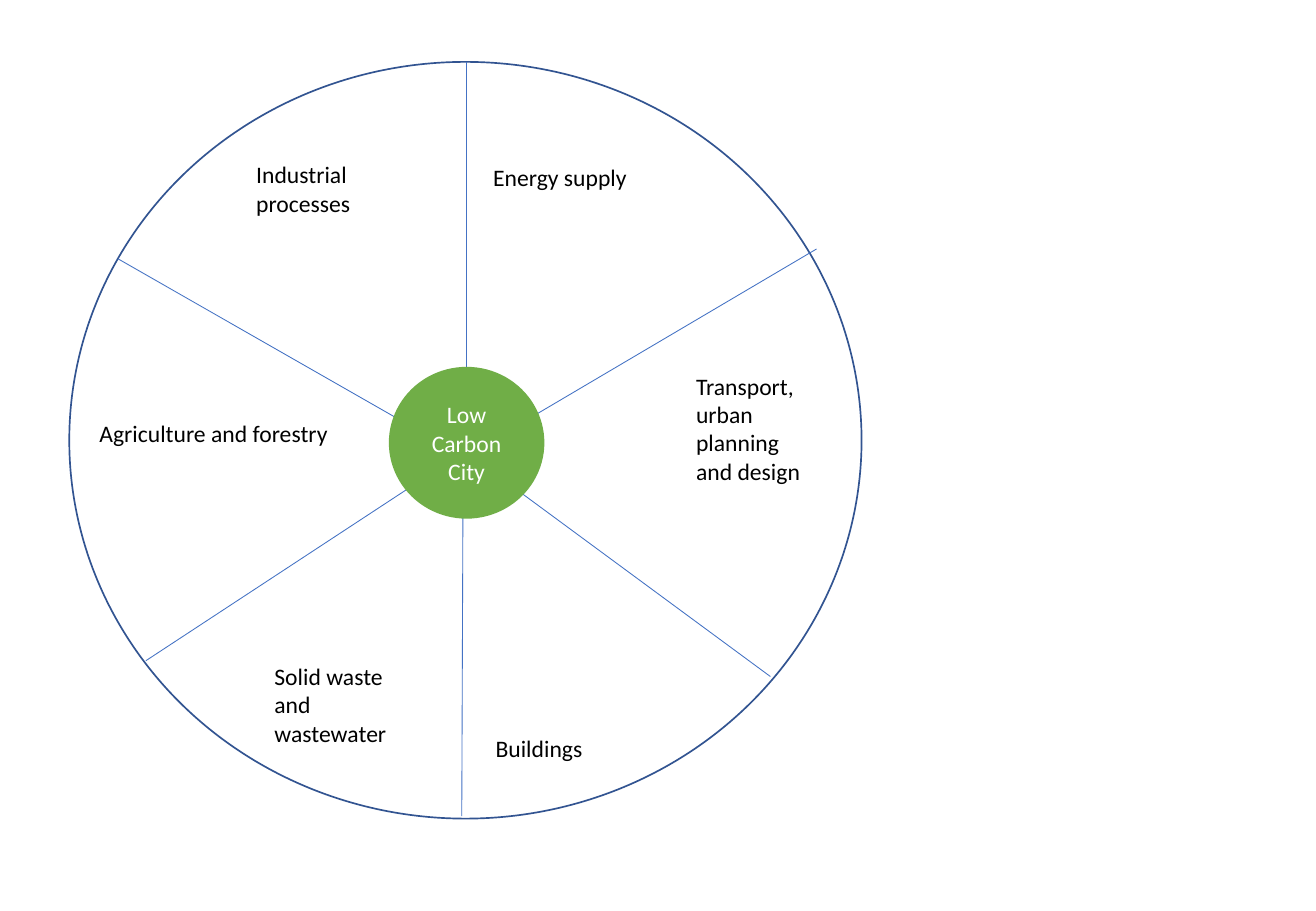
from pptx import Presentation
from pptx.dml.color import RGBColor as RGB
from pptx.enum.shapes import MSO_CONNECTOR as LINK, MSO_SHAPE as SHAPE
from pptx.enum.text import MSO_ANCHOR as ANCHOR, PP_ALIGN as ALIGN
from pptx.oxml.ns import qn
from pptx.util import Inches, Pt
from lxml.etree import SubElement

NAVY = RGB(0x32, 0x54, 0x91)
BLUE = RGB(0x44, 0x72, 0xC4)
GREEN = RGB(0x70, 0xAE, 0x47)
BLACK = RGB(0, 0, 0)
WHITE = RGB(255, 255, 255)

SPOKES = [
    (3.84, 3.02, 3.84, 0.51),
    (3.89, 3.72, 6.72, 2.05),
    (3.83, 3.72, 6.34, 5.57),
    (3.82, 3.72, 1.2, 5.44),
    (3.75, 3.72, 0.97, 2.13),
    (3.8, 6.72, 3.81, 4.13),
]
SECTORS = [
    ("Energy supply", 3.96, 1.29, 1.56, 0.38),
    ("Transport, urban planning and design", 5.63, 3.01, 1.17, 1.43),
    ("Buildings", 3.98, 5.99, 1.07, 0.38),
    ("Solid waste and wastewater", 2.16, 5.4, 1.43, 0.9),
    ("Agriculture and forestry", 0.72, 3.4, 2.16, 0.64),
    ("Industrial processes", 2.01, 1.27, 1.28, 0.64),
]


class Wheel:
    font = "Calibri"
    size = Pt(14)

    def __init__(self, slide):
        self.shapes = slide.shapes

    def letter(self, shape, text, color):
        frame = shape.text_frame
        frame.word_wrap = True
        run = frame.paragraphs[0].add_run()
        run.text = text
        run.font.name = self.font
        run.font.size = self.size
        run.font.color.rgb = color
        return frame

    def disc(self, *place):
        disc = self.shapes.add_shape(SHAPE.OVAL, *map(Inches, place))
        disc.shadow.inherit = False
        return disc

    def rim(self, *place):
        rim = self.disc(*place)
        rim.fill.background()
        rim.line.color.rgb = NAVY
        rim.line.width = Pt(1)

    def hub(self, text, *place):
        hub = self.disc(*place)
        hub.fill.solid()
        hub.fill.fore_color.rgb = GREEN
        hub.line.fill.background()
        frame = self.letter(hub, text, WHITE)
        frame.vertical_anchor = ANCHOR.MIDDLE
        frame.paragraphs[0].alignment = ALIGN.CENTER

    def spoke(self, *ends):
        spoke = self.shapes.add_connector(LINK.STRAIGHT, *map(Inches, ends))
        spoke.line.color.rgb = BLUE
        spoke.line.width = Pt(0.5)
        SubElement(spoke._element.spPr, qn("a:effectLst"))

    def label(self, text, *place):
        self.letter(self.shapes.add_textbox(*map(Inches, place)), text, BLACK)


def main():
    deck = Presentation()
    deck.slide_width = Inches(10.83)
    deck.slide_height = Inches(7.5)
    wheel = Wheel(deck.slides.add_slide(deck.slide_layouts[6]))
    wheel.rim(0.57, 0.51, 6.52, 6.23)
    for ends in SPOKES:
        wheel.spoke(*ends)
    for sector in SECTORS:
        wheel.label(*sector)
    wheel.hub("Low Carbon City", 3.2, 3.02, 1.28, 1.25)
    deck.save("out.pptx")


if __name__ == "__main__":
    main()
